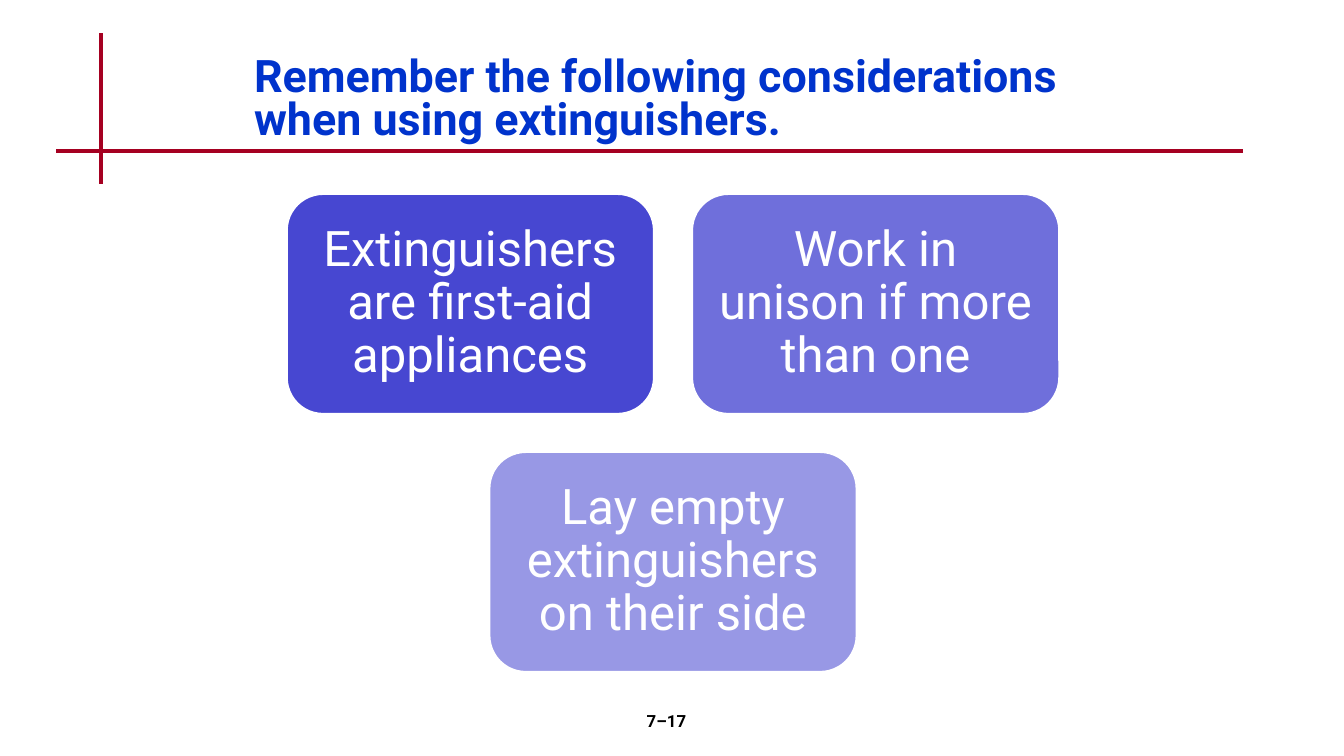
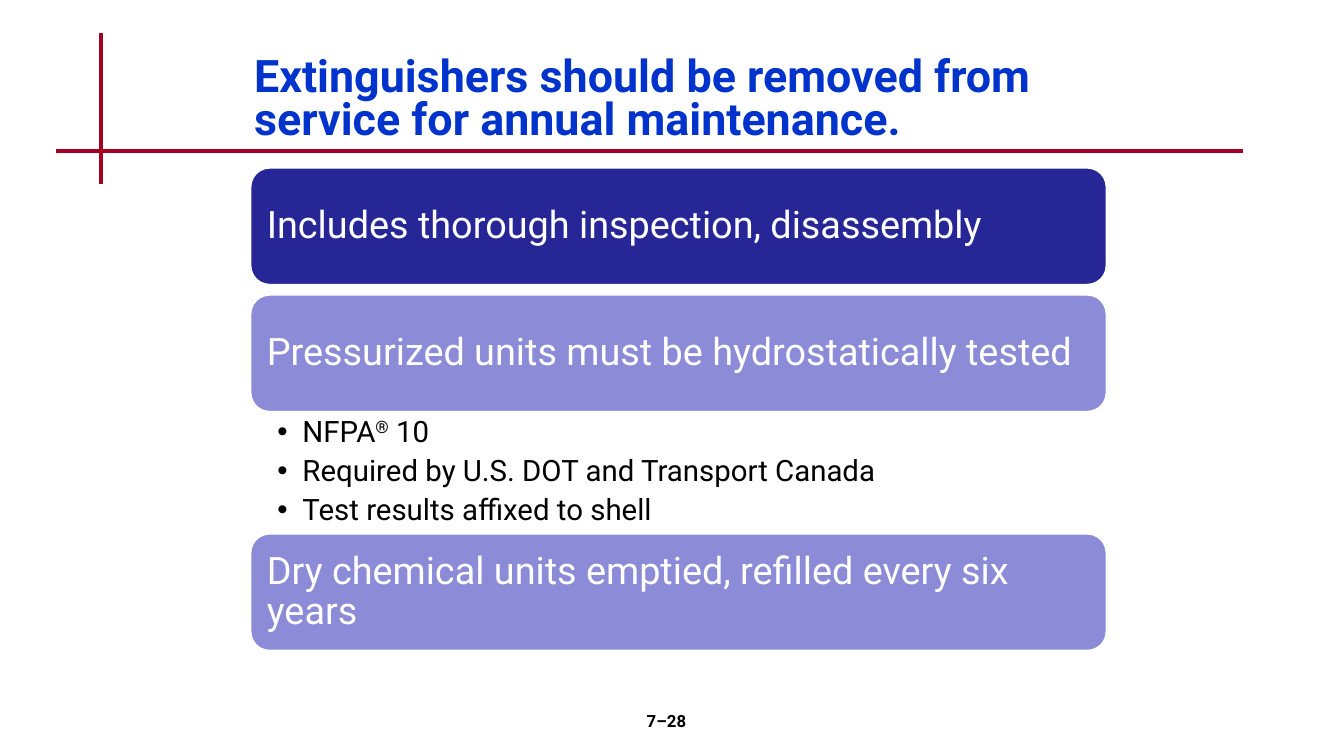
"""Build two fire extinguisher training slides."""
from lxml import etree
from pptx import Presentation
from pptx.dml.color import RGBColor
from pptx.enum import shapes, text
from pptx.oxml.ns import qn
from pptx.util import Emu, Pt

PX = 9144
FONT = "Roboto"
BLUE = RGBColor(0x00, 0x33, 0xCC)
RED = RGBColor(0xA5, 0x00, 0x21)
INDIGO = RGBColor(0x33, 0x33, 0xCC)
NAVY = RGBColor(0x26, 0x26, 0x97)
LAVENDER = RGBColor(0x8B, 0x8B, 0xD7)
BLACK = RGBColor(0, 0, 0)
WHITE = RGBColor(255, 255, 255)

RULES = [(100, 33, 100, 183), (56, 150, 1233, 150)]
CONSIDERATIONS = {
    "title": "Remember the following considerations when using extinguishers.",
    "title_width": 925,
    "number": "7–17",
    "rows": [
        [("Extinguishers are first-aid appliances", 90),
         ("Work in unison if more than one", 70)],
        [("Lay empty extinguishers on their side", 50)],
    ],
}
MAINTENANCE = {
    "title": "Extinguishers should be removed from service for annual maintenance.",
    "title_width": 880,
    "number": "7–28",
    "bars": [
        ("Includes thorough inspection, disassembly", NAVY, 166),
        ("Pressurized units must be hydrostatically tested", LAVENDER, 292),
        ("Dry chemical units emptied, refilled every six years", LAVENDER, 529),
    ],
    "tests": [
        ("NFPA", "®", " 10"),
        ("Required by U.S. DOT and Transport Canada",),
        ("Test results affixed to shell",),
    ],
}
CARD_WIDTH, CARD_HEIGHT, CARD_GAP = 365, 219, 37
CARDS_CENTER, CARDS_TOP = 667, 192
BAR_LEFT, BAR_WIDTH, BAR_HEIGHT = 248, 850, 117
LIST_HEIGHT = 119


def px(*lengths):
    return [Emu(length * PX) for length in lengths]


def place(box, *bounds):
    box.left, box.top, box.width, box.height = px(*bounds)


def set_margins(frame, left, top, right, bottom):
    frame.margin_left, frame.margin_top, frame.margin_right, frame.margin_bottom = px(
        left, top, right, bottom)


def style_para(para, size, color, align, bold=False, spacing=1.0):
    para.alignment = align
    para.line_spacing = spacing
    for span in para.runs:
        span.font.name = FONT
        span.font.size = Pt(size)
        span.font.bold = bold
        span.font.color.rgb = color


def add_rule(page, *ends):
    rule = page.shapes.add_connector(shapes.MSO_CONNECTOR.STRAIGHT, *px(*ends))
    rule.line.color.rgb = RED
    rule.line.width = Pt(3)
    etree.SubElement(rule._element.spPr, qn("a:effectLst"))


def add_page(deck, layout, content):
    page = deck.slides.add_slide(deck.slide_layouts[layout])
    for ends in RULES:
        add_rule(page, *ends)
    title = page.shapes.title
    place(title, 242, 50, content["title_width"], 100)
    frame = title.text_frame
    frame.text = content["title"]
    frame.auto_size = text.MSO_AUTO_SIZE.NONE
    frame.vertical_anchor = text.MSO_ANCHOR.MIDDLE
    style_para(frame.paragraphs[0], 32, BLUE, text.PP_ALIGN.LEFT, True, 0.8)

    number = page.shapes.add_textbox(*px(522, 700, 278, 50)).text_frame
    number.word_wrap = True
    number.text = content["number"]
    style_para(number.paragraphs[0], 12, BLACK, text.PP_ALIGN.CENTER, True)
    return page


def add_panel(page, kind, bounds, label, color, size, margin, align):
    panel = page.shapes.add_shape(kind, *px(*bounds))
    panel.shadow.inherit = False
    panel.fill.solid()
    panel.fill.fore_color.rgb = color
    panel.line.color.rgb = WHITE
    panel.line.width = Pt(2)
    frame = panel.text_frame
    frame.word_wrap = True
    frame.vertical_anchor = text.MSO_ANCHOR.MIDDLE
    set_margins(frame, margin, margin, margin, margin)
    frame.text = label
    style_para(frame.paragraphs[0], size, WHITE, align, spacing=0.9)
    return panel


def set_opacity(shape, percent):
    color = shape._element.spPr.find(qn("a:solidFill"))[0]
    etree.SubElement(color, qn("a:alpha"), val=str(percent * 1000))


def add_cards(page, rows):
    for row, cards in enumerate(rows):
        row_width = len(cards) * (CARD_WIDTH + CARD_GAP) - CARD_GAP
        left = CARDS_CENTER - row_width // 2
        top = CARDS_TOP + row * (CARD_HEIGHT + CARD_GAP)
        for column, (label, opacity) in enumerate(cards):
            bounds = (left + column * (CARD_WIDTH + CARD_GAP), top, CARD_WIDTH, CARD_HEIGHT)
            card = add_panel(page, shapes.MSO_SHAPE.FLOWCHART_ALTERNATE_PROCESS, bounds,
                             label, INDIGO, 35, 15, text.PP_ALIGN.CENTER)
            set_opacity(card, opacity)


def add_bullet(para):
    props = para._p.get_or_add_pPr()
    props.set("marL", str(25 * PX))
    props.set("indent", str(-25 * PX))
    etree.SubElement(props, qn("a:buFont"), typeface="Arial")
    etree.SubElement(props, qn("a:buChar"), char="•")


def fill_list(box, items, top):
    place(box, BAR_LEFT, top, BAR_WIDTH, LIST_HEIGHT)
    frame = box.text_frame
    frame.auto_size = text.MSO_AUTO_SIZE.NONE
    frame.vertical_anchor = text.MSO_ANCHOR.TOP
    set_margins(frame, 27, 4, 21, 4)
    for index, pieces in enumerate(items):
        para = frame.add_paragraph() if index else frame.paragraphs[0]
        para.space_before = Pt(0)
        para.space_after = Pt(5)
        add_bullet(para)
        for piece in pieces:
            span = para.add_run()
            span.text = piece
            if piece == "®":
                span._r.get_or_add_rPr().set("baseline", "30000")
        style_para(para, 21, BLACK, text.PP_ALIGN.LEFT, spacing=0.9)


def main():
    deck = Presentation()
    deck.slide_width, deck.slide_height = px(1333, 750)

    page = add_page(deck, 5, CONSIDERATIONS)
    add_cards(page, CONSIDERATIONS["rows"])

    page = add_page(deck, 1, MAINTENANCE)
    for label, color, top in MAINTENANCE["bars"]:
        add_panel(page, shapes.MSO_SHAPE.ROUNDED_RECTANGLE,
                  (BAR_LEFT, top, BAR_WIDTH, BAR_HEIGHT),
                  label, color, 27, 11, text.PP_ALIGN.LEFT)
    list_top = MAINTENANCE["bars"][1][2] + BAR_HEIGHT + 1
    fill_list(page.placeholders[1], MAINTENANCE["tests"], list_top)

    deck.save("out.pptx")


if __name__ == "__main__":
    main()
